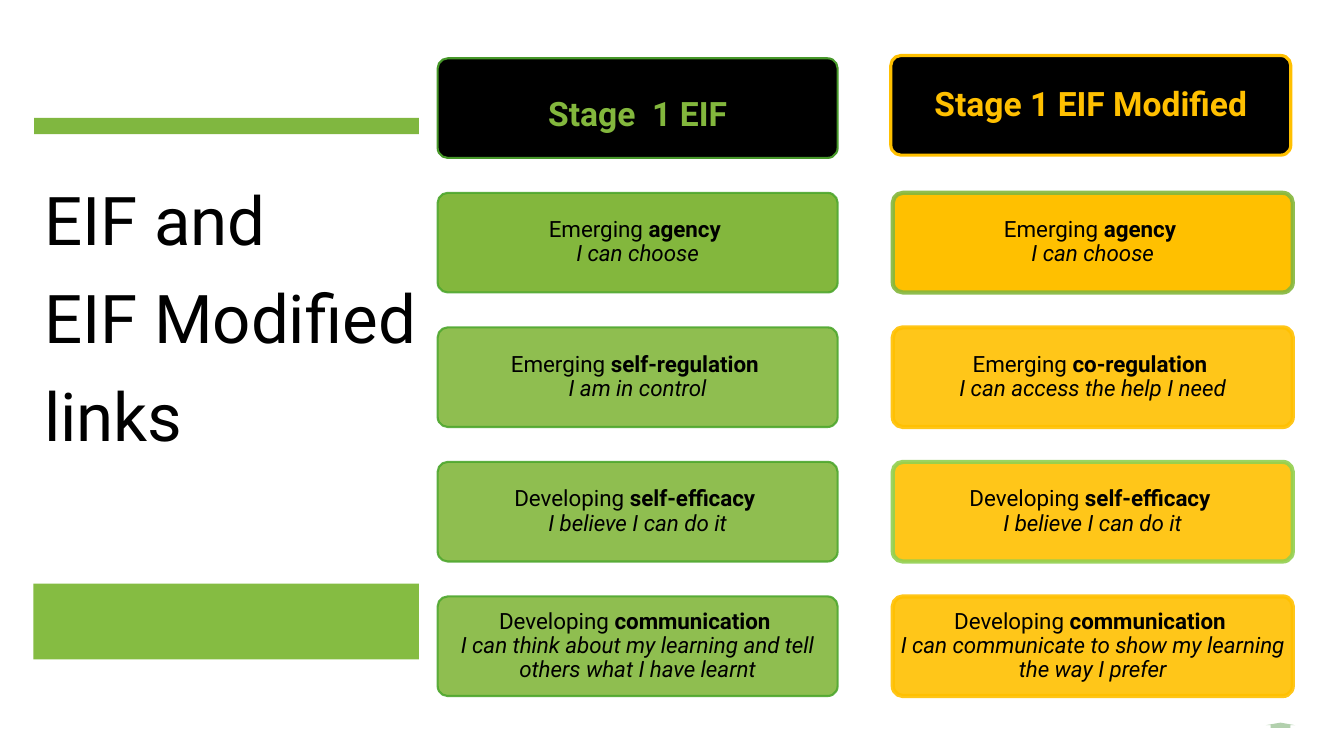
from dataclasses import dataclass

from lxml import etree
from pptx import Presentation
from pptx import util as u
from pptx.dml.color import RGBColor
from pptx.enum import shapes, text
from pptx.oxml.ns import qn


@dataclass(frozen=True)
class Theme:
    """Colours and type sizes of the slide."""
    font: str = "Roboto"
    black: str = "000000"
    green: str = "83B73D"
    rule_green: str = "80B740"
    band_green: str = "85BC42"
    edge_green: str = "4EA72E"
    header_edge: str = "47982A"
    light_green: str = "92D050"
    pale_green: str = "B2D0AD"
    amber: str = "FFC000"
    title: int = 48
    header: int = 24
    body: int = 16


class SlideBuilder:
    """Draws styled elements on the current page."""

    def __init__(self, page, theme):
        self.page = page
        self.theme = theme

    def paint(self, fill, color, alpha=100):
        """Give a fill a solid colour with an opacity in percent."""
        fill.solid()
        fill.fore_color.rgb = RGBColor.from_string(color)
        if alpha < 100:
            rgb = next(fill._xPr.iter(qn("a:srgbClr")))
            etree.SubElement(rgb, qn("a:alpha")).set("val", str(alpha * 1000))

    def shape(self, kind, area, fill, alpha=100):
        """Add a flat preset shape without an outline."""
        box = self.page.shapes.add_shape(kind, *map(u.Cm, area))
        box.shadow.inherit = False
        self.paint(box.fill, fill, alpha)
        box.line.fill.background()
        return box

    def style(self, paragraph, size, color, bold=False, italic=False):
        """Set the font of a whole paragraph."""
        font = paragraph.font
        font.name = self.theme.font
        font.size = u.Pt(size)
        font.bold = bold
        font.italic = italic
        font.color.rgb = RGBColor.from_string(color)

    def title(self, area, lines):
        """Add the slide title with fixed line spacing."""
        box = self.page.shapes.add_textbox(*map(u.Cm, area))
        frame = box.text_frame
        frame.word_wrap = True
        frame.text = "\n".join(lines)
        for paragraph in frame.paragraphs:
            paragraph.line_spacing = u.Pt(70)
            self.style(paragraph, self.theme.title, self.theme.black)

    def card(self, area, fill, edge, width, alpha=100, edge_alpha=100):
        """Add an outlined rounded card and return its text frame."""
        box = self.shape(shapes.MSO_SHAPE.ROUNDED_RECTANGLE, area, fill, alpha)
        box.adjustments[0] = 0.1
        self.paint(box.line.fill, edge, edge_alpha)
        box.line.width = u.Pt(width)
        frame = box.text_frame
        frame.word_wrap = True
        frame.vertical_anchor = text.MSO_ANCHOR.MIDDLE
        frame.margin_left = frame.margin_right = u.Cm(0.05)
        frame.margin_top = frame.margin_bottom = u.Cm(0.05)
        return frame

    def centre(self, paragraph):
        """Centre a card paragraph and tighten its lines."""
        paragraph.alignment = text.PP_ALIGN.CENTER
        paragraph.line_spacing = 0.9

    def header(self, area, label, color, edge, width, drop=0):
        """Add a black column header, its label lowered by drop."""
        frame = self.card(area, self.theme.black, edge, width)
        frame.margin_top = u.Cm(0.05 + 2 * drop)
        paragraph = frame.paragraphs[0]
        paragraph.text = label
        self.centre(paragraph)
        self.style(paragraph, self.theme.header, color, bold=True)

    def skill(self, area, level, topic, statement, **look):
        """Add a card with a skill and its learner statement."""
        frame = self.card(area, **look)
        skill = frame.paragraphs[0]
        skill.add_run().text = f"{level} "
        span = skill.add_run()
        span.text = f"{topic} "
        claim = frame.add_paragraph()
        claim.text = statement
        for paragraph in (skill, claim):
            self.centre(paragraph)
            self.style(paragraph, self.theme.body, self.theme.black, italic=paragraph is claim)
        span.font.bold = True


def main():
    """Build the slide and save it."""
    deck = Presentation()
    deck.slide_width, deck.slide_height = u.Cm(33.87), u.Cm(19.05)
    theme = Theme()
    page = deck.slides.add_slide(deck.slide_layouts[6])
    builder = SlideBuilder(page, theme)

    builder.shape(shapes.MSO_SHAPE.RECTANGLE, (0.86, 2.97, 9.7, 0.41), theme.rule_green)
    builder.shape(shapes.MSO_SHAPE.RECTANGLE, (0.84, 14.71, 9.72, 1.91), theme.band_green)
    builder.title((0.86, 3.94, 9.96, 7.54), ["EIF and", "EIF Modified", "links"])

    size = (10.08, 2.51)
    top, pitch = 1.47, 3.39
    left, right = 11.03, 22.5
    builder.header((left, top, *size), "Stage  1 EIF", theme.green, theme.header_edge, 1.5, drop=0.2)
    builder.header((22.45, 1.4, *size), "Stage 1 EIF Modified", theme.amber, theme.amber, 2.25)

    standard = [
        ("Emerging", "agency", "I can choose"),
        ("Emerging", "self-regulation", "I am in control"),
        ("Developing", "self-efficacy", "I believe I can do it"),
        ("Developing", "communication",
         "I can think about my learning and tell others what I have learnt"),
    ]
    modified = [
        standard[0],
        ("Emerging", "co-regulation", "I can access the help I need"),
        standard[2],
        ("Developing", "communication",
         "I can communicate to show my learning the way I prefer"),
    ]
    modified_edges = [theme.green, theme.amber, theme.light_green, theme.amber]
    columns = [
        (left, standard, theme.green, [theme.edge_green] * 4, 1.5),
        (right, modified, theme.amber, modified_edges, 3),
    ]
    for x, skills, fill, edges, width in columns:
        for row, (words, edge) in enumerate(zip(skills, edges), 1):
            builder.skill((x, top + row * pitch, *size), *words, fill=fill, edge=edge, width=width,
                          alpha=100 if row == 1 else 90, edge_alpha=90)

    arrow = builder.shape(shapes.MSO_SHAPE.UP_ARROW, (31.9, 18.21, 0.74, 0.13), theme.pale_green)
    arrow.adjustments[0] = 0.67
    deck.save("out.pptx")


if __name__ == "__main__":
    main()
